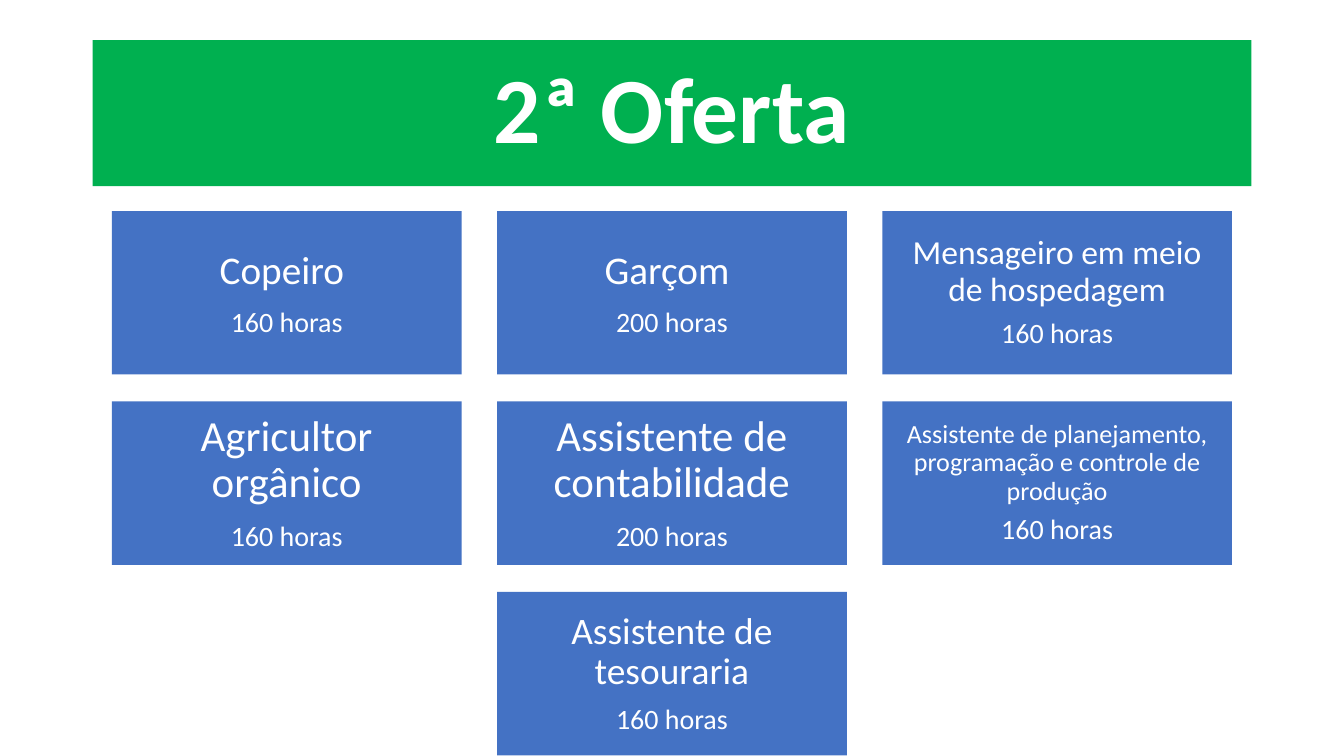
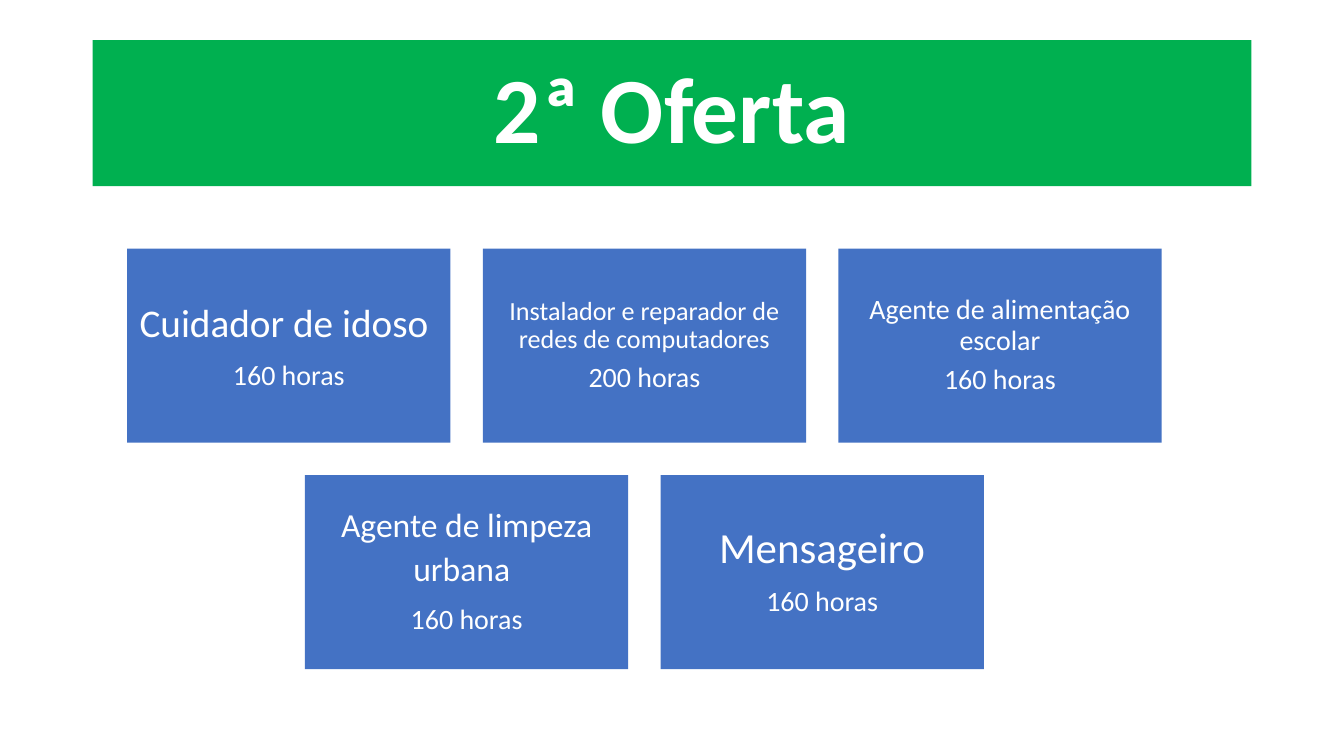
"""Build two slides listing the courses of the second offer."""
from pptx import Presentation
from pptx.dml.color import RGBColor
from pptx.enum.shapes import MSO_SHAPE as Shape
from pptx.enum.text import MSO_ANCHOR as Anchor, PP_ALIGN as Align
from pptx.util import Cm, Pt

GREEN = RGBColor(0x00, 0xB0, 0x50)
BLUE = RGBColor(0x44, 0x72, 0xC4)
WHITE = RGBColor(0xFF, 0xFF, 0xFF)
FONT = "Calibri"
TITLE = "2ª Oferta"
TITLE_SIZE = 50
HOURS_SIZE = 15
SPACE_SIZE = 23

# Each course: name, hours, name size; a trailing space in the name is set larger.
OFFERS = [
    {
        "center": 12.7, "top": 3.99, "card": (6.61, 3.09), "gap": (0.67, 0.51),
        "rows": [
            [("Copeiro ", "160 horas", 21),
             ("Garçom ", "200 horas", 21),
             ("Mensageiro em meio de hospedagem", "160 horas", 18)],
            [("Agricultor orgânico", "160 horas", 23),
             ("Assistente de contabilidade", "200 horas", 23),
             ("Assistente de planejamento, programação e controle de produção",
              "160 horas", 14)],
            [("Assistente de tesouraria", "160 horas", 20)],
        ],
    },
    {
        "center": 12.18, "top": 4.7, "card": (6.11, 3.67), "gap": (0.61, 0.61),
        "rows": [
            [("Cuidador de idoso ", "160 horas", 21),
             ("Instalador e reparador de redes de computadores", "200 horas", 14),
             ("Agente de alimentação escolar", "160 horas", 15)],
            [("Agente de limpeza urbana ", "160 horas", 18),
             ("Mensageiro", "160 horas", 23)],
        ],
    },
]


def add_box(slide, left, top, width, height, color, inset_x, inset_y):
    box = slide.shapes.add_shape(Shape.RECTANGLE, Cm(left), Cm(top), Cm(width), Cm(height))
    box.shadow.inherit = False
    box.fill.solid()
    box.fill.fore_color.rgb = color
    box.line.fill.background()
    frame = box.text_frame
    frame.word_wrap = True
    frame.vertical_anchor = Anchor.MIDDLE
    frame.margin_left = frame.margin_right = Cm(inset_x)
    frame.margin_top = frame.margin_bottom = Cm(inset_y)
    return frame


def format_paragraph(paragraph, size, bold=False):
    paragraph.alignment = Align.CENTER
    paragraph.line_spacing = 0.9
    for run in paragraph.runs:
        font = run.font
        font.name, font.size, font.bold = FONT, Pt(size), bold
        font.color.rgb = WHITE


def add_title(slide):
    frame = add_box(slide, 1.75, 0.76, 21.9, 2.76, GREEN, 0.18, 0.1)
    frame.text = TITLE
    format_paragraph(frame.paragraphs[0], TITLE_SIZE, bold=True)


def add_course(slide, left, top, width, height, course):
    name, hours, size = course
    frame = add_box(slide, left, top, width, height, BLUE, size / 100, size / 100)
    label = name.rstrip()
    frame.text = label
    name_paragraph = frame.paragraphs[0]
    spaced = label != name
    if spaced:
        name_paragraph.add_run().text = " "
    format_paragraph(name_paragraph, size)
    if spaced:
        name_paragraph.runs[-1].font.size = Pt(SPACE_SIZE)

    hours_paragraph = frame.add_paragraph()
    hours_paragraph.text = hours
    format_paragraph(hours_paragraph, HOURS_SIZE)
    largest = SPACE_SIZE if spaced else size
    hours_paragraph.space_before = Pt(round(0.35 * largest))


def add_courses(slide, offer):
    width, height = offer["card"]
    gap_x, gap_y = offer["gap"]
    for row_index, row in enumerate(offer["rows"]):
        row_width = len(row) * (width + gap_x) - gap_x
        row_left = offer["center"] - row_width / 2
        top = offer["top"] + row_index * (height + gap_y)
        for column, course in enumerate(row):
            left = row_left + column * (width + gap_x)
            add_course(slide, left, top, width, height, course)


def main():
    presentation = Presentation()
    presentation.slide_width = Cm(25.4)
    presentation.slide_height = Cm(14.29)
    blank = presentation.slide_layouts[6]
    for offer in OFFERS:
        slide = presentation.slides.add_slide(blank)
        add_title(slide)
        add_courses(slide, offer)
    presentation.save("out.pptx")


if __name__ == "__main__":
    main()
